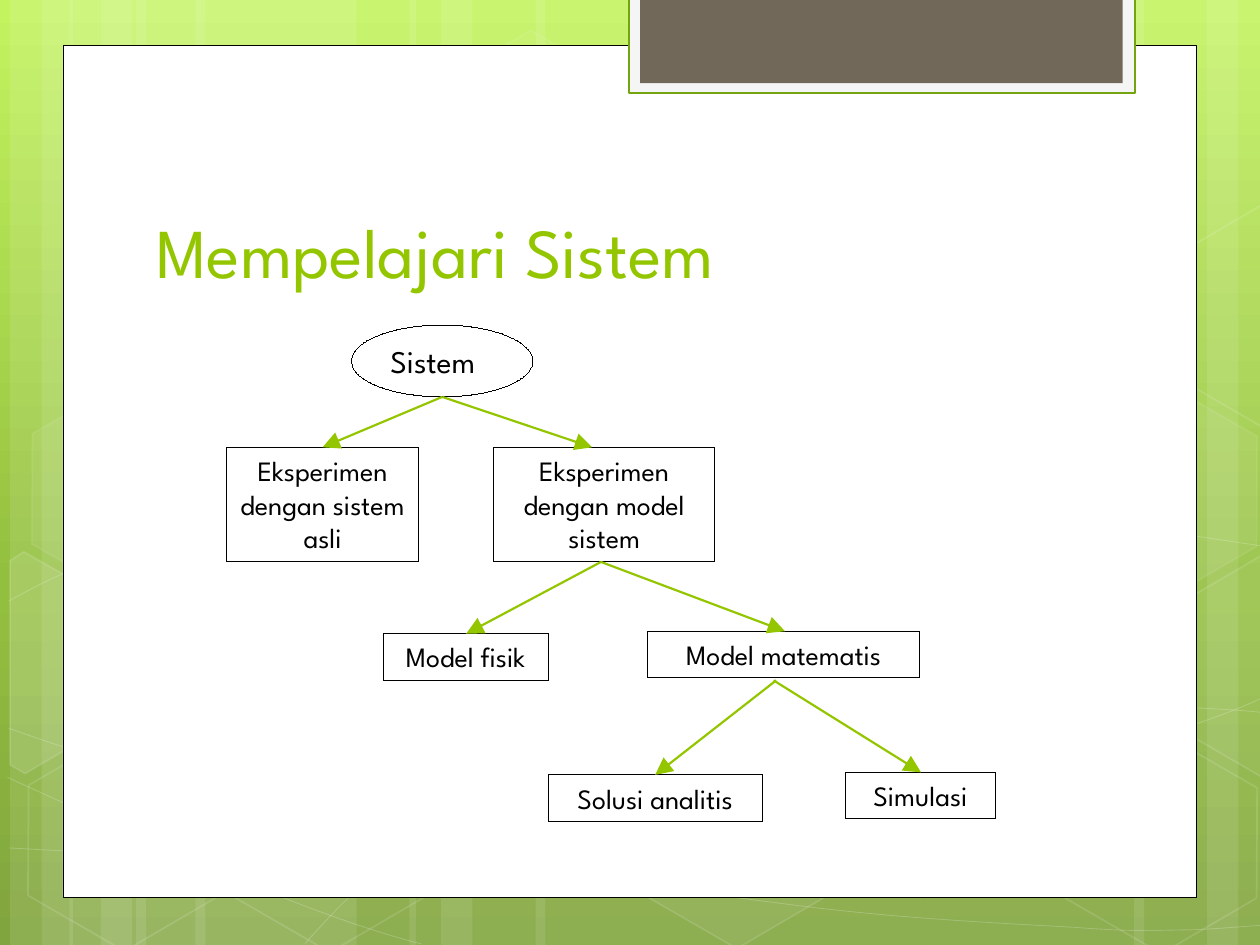
from copy import deepcopy
from dataclasses import dataclass
from typing import Optional

from lxml.etree import SubElement
from pptx import Presentation
from pptx.dml.color import RGBColor
from pptx.enum.shapes import MSO_CONNECTOR, MSO_SHAPE
from pptx.enum.text import MSO_ANCHOR, MSO_AUTO_SIZE, PP_ALIGN
from pptx.oxml.ns import qn
from pptx.util import Inches, Pt

Point = tuple[float, float]


@dataclass(frozen=True)
class Theme:
    font: str = "League Spartan"
    title_size: int = 40
    root_size: int = 18
    node_size: int = 16
    white: str = "FFFFFF"
    black: str = "000000"
    accent: str = "94C600"
    tab: str = "F5F5F5"
    tab_edge: str = "74A510"
    tab_core: str = "71685A"
    gradient: tuple = ((0, "C3F35F"), (0.62, "93BF3F"), (1, "81A53E"))


@dataclass(frozen=True)
class Paint:
    fill: Optional[str] = None
    fill_opacity: int = 100
    line: Optional[str] = None
    line_width: Optional[float] = None
    line_opacity: int = 100


@dataclass(frozen=True)
class Node:
    label: str
    left: float
    top: float
    width: float
    height: float = 0.37
    kind: MSO_SHAPE = MSO_SHAPE.RECTANGLE
    size: int = Theme.node_size
    align: PP_ALIGN = PP_ALIGN.CENTER


THEME = Theme()
STRIPE = Paint(THEME.white, 10)
CURVE = Paint(line=THEME.white, line_width=0.5, line_opacity=20)
NODE = Paint(line=THEME.black)

STRIPES = [(1.08, 1.75), (0.08, 0.5), (0.33, 0.83), (1.55, 1.75), (0.55, 0.5), (0.8, 0.83),
           (7.33, 1.75), (9.58, 0.5), (9, 0.83), (4.25, 3.08), (3.25, 0.5), (3.5, 0.83)]

CURVES = [
    [(0.07, 6.73), (0.61, 6.76), (1.15, 6.79), (1.9, 6.78), (2.65, 6.77), (3.58, 6.75), (4.58, 6.65),
     (5.58, 6.55), (7, 6.36), (7.92, 6.17), (8.83, 5.98), (9.77, 5.68), (10.07, 5.51)],
    [(0.07, 4.77), (0.36, 4.61), (0.65, 4.46), (1.21, 4.31), (1.78, 4.16), (2.59, 3.94), (3.47, 3.87),
     (4.36, 3.8), (5.44, 3.79), (6.54, 3.87), (7.64, 3.95), (9.47, 4.26), (10.07, 4.34)],
    [(0.06, 6.17), (1.27, 6.72), (2.47, 7.27), (3.34, 7.49)],
    [(0.07, 5.78), (0.38, 5.89), (0.7, 6), (1.28, 6.16), (1.86, 6.31), (2.73, 6.56), (3.57, 6.73),
     (4.4, 6.9), (5.45, 7.08), (6.28, 7.18), (7.11, 7.29), (8, 7.33), (8.53, 7.36),
     (9.05, 7.4), (9.19, 7.38), (9.45, 7.38), (9.71, 7.37), (9.89, 7.35), (10.07, 7.34)],
    [(2.42, 7.49), (2.6, 7.29), (2.78, 7.09), (3.02, 6.91), (3.26, 6.73), (3.6, 6.53), (3.88, 6.39),
     (4.16, 6.25), (4.33, 6.19), (4.7, 6.09), (5.06, 5.99), (5.73, 5.85), (6.08, 5.78),
     (6.44, 5.71), (6.49, 5.71), (6.8, 5.69), (7.11, 5.66), (7.6, 5.63), (7.94, 5.62),
     (8.29, 5.61), (8.86, 5.62), (8.86, 5.62), (9.08, 5.62), (9.31, 5.62), (9.53, 5.62),
     (9.71, 5.63), (9.88, 5.64), (9.97, 5.65), (10.06, 5.66), (10.03, 5.65), (10.06, 5.66)],
]

HEXAGONS = [(3.34, 0.36, 4, 8), (4.97, 5.89, 6, 12), (0.11, 5.91, 0, 12), (0.14, 3.12, 7, 8),
            (1.74, 5.92, 0, 12), (7.53, 4.53, 10, 12), (8.34, 5.93, 0, 12), (8.34, 3.14, 7, 8)]

CUT_HEXAGONS = [
    ([(0.08, 4.45), (0.19, 4.38), (0.96, 4.82), (0.95, 5.7), (0.2, 6.14), (0.08, 6.07)], 10),
    ([(9.26, 4.85), (10.01, 4.41), (10.09, 4.46), (10.09, 6.13), (10.02, 6.17), (9.26, 5.73)], 4),
    ([(9.26, 2.07), (10.01, 1.63), (10.1, 1.68), (10.09, 3.35), (10.02, 3.39), (9.26, 2.95)], 0),
]

NODES = [
    Node("Sistem", 2.79, 2.58, 1.44, 0.57, MSO_SHAPE.OVAL, THEME.root_size, PP_ALIGN.LEFT),
    Node("Eksperimen dengan sistem asli", 1.8, 3.55, 1.52, 0.91),
    Node("Eksperimen dengan model sistem", 3.92, 3.55, 1.75, 0.91),
    Node("Model fisik", 3.04, 5.03, 1.31),
    Node("Model matematis", 5.14, 5.01, 2.16),
    Node("Solusi analitis", 4.35, 6.15, 1.7),
    Node("Simulasi", 6.71, 6.13, 1.19),
]

ARROWS = [((3.51, 3.15), (2.56, 3.55)), ((3.51, 3.15), (4.7, 3.55)),
          ((4.77, 4.46), (3.7, 5.03)), ((4.77, 4.46), (6.23, 5.01)),
          ((6.16, 5.4), (5.2, 6.15)), ((6.14, 5.4), (7.31, 6.13))]


def set_opacity(parent, percent: int) -> None:
    if percent < 100:
        color = next(parent.iter(qn("a:srgbClr")))
        SubElement(color, qn("a:alpha")).set("val", str(percent * 1000))


def apply_paint(shape, paint: Paint) -> None:
    shape.shadow.inherit = False
    shape._element.remove(shape._element.find(qn("p:style")))
    properties = shape._element.spPr
    if paint.fill and paint.fill_opacity:
        shape.fill.solid()
        shape.fill.fore_color.rgb = RGBColor.from_string(paint.fill)
        set_opacity(properties.find(qn("a:solidFill")), paint.fill_opacity)
    else:
        shape.fill.background()
    if paint.line:
        shape.line.color.rgb = RGBColor.from_string(paint.line)
        if paint.line_width:
            shape.line.width = Pt(paint.line_width)
        set_opacity(properties.find(qn("a:ln")), paint.line_opacity)
    else:
        shape.line.fill.background()


def add_preset(page, kind: MSO_SHAPE, left: float, top: float, width: float, height: float, paint: Paint):
    shape = page.shapes.add_shape(kind, Inches(left), Inches(top), Inches(width), Inches(height))
    apply_paint(shape, paint)
    return shape


def add_outline(page, points: list[Point], closed: bool, paint: Paint):
    corners = [(Inches(x), Inches(y)) for x, y in points]
    builder = page.shapes.build_freeform(*corners[0])
    builder.add_line_segments(corners[1:], close=closed)
    shape = builder.convert_to_shape()
    apply_paint(shape, paint)
    return shape


def add_curve(page, controls: list[Point]) -> None:
    shape = add_outline(page, controls, False, CURVE)
    outline = next(shape._element.iter(qn("a:path")))
    segments = outline.findall(qn("a:lnTo"))
    for first in range(0, len(segments), 3):
        bend = SubElement(outline, qn("a:cubicBezTo"))
        for segment in segments[first:first + 3]:
            bend.append(segment[0])
            outline.remove(segment)


def write_text(box, text: str, size: int, color: str, align: PP_ALIGN, anchor: MSO_ANCHOR) -> None:
    frame = box.text_frame
    frame.text = text
    frame.word_wrap = True
    frame.vertical_anchor = anchor
    paragraph = frame.paragraphs[0]
    paragraph.alignment = align
    font = paragraph.runs[0].font
    font.name, font.size = THEME.font, Pt(size)
    font.color.rgb = RGBColor.from_string(color)


def add_node(page, node: Node) -> None:
    box = add_preset(page, node.kind, node.left, node.top, node.width, node.height, NODE)
    write_text(box, node.label, node.size, THEME.black, node.align, MSO_ANCHOR.TOP)
    box.text_frame.auto_size = MSO_AUTO_SIZE.SHAPE_TO_FIT_TEXT


def add_arrow(page, start: Point, end: Point) -> None:
    arrow = page.shapes.add_connector(MSO_CONNECTOR.STRAIGHT, *map(Inches, start + end))
    arrow.line.color.rgb = RGBColor.from_string(THEME.accent)
    arrow.line.width = Pt(1.25)
    properties = arrow._element.spPr
    SubElement(properties.find(qn("a:ln")), qn("a:tailEnd"), type="triangle", w="lg", len="lg")
    SubElement(properties, qn("a:effectLst"))


def add_backdrop(page) -> None:
    fill = page.background.fill
    fill.gradient()
    fill.gradient_angle = 270
    stop_list = next(page._element.iter(qn("a:gsLst")))
    stop_list.append(deepcopy(stop_list[-1]))
    for stop, (position, color) in zip(fill.gradient_stops, THEME.gradient):
        stop.position = position
        stop.color.rgb = RGBColor.from_string(color)
    for left, width in STRIPES:
        add_preset(page, MSO_SHAPE.RECTANGLE, left, 0, width, 7.5, STRIPE)
    for controls in CURVES:
        add_curve(page, controls)
    for left, top, fill_opacity, line_opacity in HEXAGONS:
        paint = Paint(THEME.white, fill_opacity, THEME.white, 1, line_opacity)
        hexagon = add_preset(page, MSO_SHAPE.HEXAGON, left, top, 1.75, 1.52, paint)
        hexagon.adjustments[0] = 0.285
        hexagon.rotation = 30
    for points, fill_opacity in CUT_HEXAGONS:
        add_outline(page, points, True, Paint(THEME.white, fill_opacity, THEME.white, 1, 12))


def main() -> None:
    deck = Presentation()
    deck.slide_width, deck.slide_height = Inches(10), Inches(7.5)
    page = deck.slides.add_slide(deck.slide_layouts[6])
    add_backdrop(page)
    add_preset(page, MSO_SHAPE.RECTANGLE, 0.5, 0.36, 9, 6.76, Paint(THEME.white, line=THEME.black, line_width=0.5))
    add_preset(page, MSO_SHAPE.RECTANGLE, 4.99, -0.02, 4.02, 0.76, Paint(THEME.tab, line=THEME.tab_edge, line_width=1.25))
    add_preset(page, MSO_SHAPE.RECTANGLE, 5.08, -0.02, 3.83, 0.68, Paint(THEME.tab_core))
    title = page.shapes.add_textbox(Inches(1.14), Inches(1.12), Inches(7.68), Inches(1.25))
    write_text(title, "Mempelajari Sistem", THEME.title_size, THEME.accent, PP_ALIGN.LEFT, MSO_ANCHOR.BOTTOM)
    for node in NODES:
        add_node(page, node)
    for start, end in ARROWS:
        add_arrow(page, start, end)
    deck.save("out.pptx")


if __name__ == "__main__":
    main()
